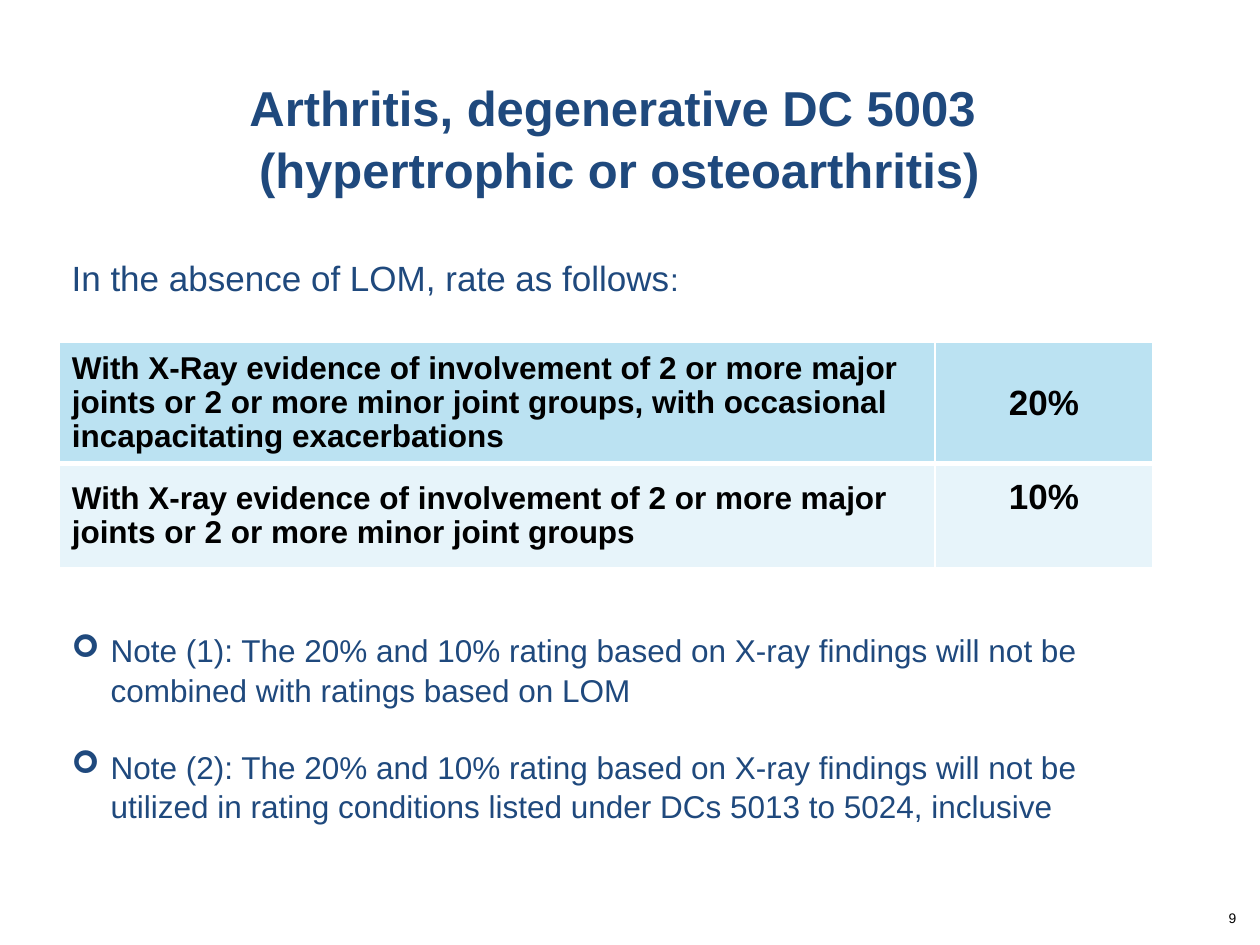
from lxml.etree import SubElement
from pptx import Presentation
from pptx.dml.color import RGBColor
from pptx.enum.text import MSO_ANCHOR, PP_ALIGN
from pptx.oxml.ns import qn
from pptx.util import Inches, Pt

NAVY = "1F497D"
BLACK = "000000"
WHITE = "FFFFFF"

RATINGS = [
    ("With X-Ray evidence of involvement of 2 or more major joints or 2 or more minor joint groups, "
     "with occasional incapacitating exacerbations", "20%", "BBE2F2", 0.96, 3),
    ("With X-ray evidence of involvement of 2 or more major joints or 2 or more minor joint groups",
     "10%", "E7F4FA", 0.83, 1),
]
NOTES = [
    "Note (1): The 20% and 10% rating based on X-ray findings will not be combined with ratings based on LOM",
    "Note (2): The 20% and 10% rating based on X-ray findings will not be utilized in rating conditions "
    "listed under DCs 5013 to 5024, inclusive",
]


def color(value):
    return RGBColor.from_string(value)


def add_text(para, text, size=18, ink=NAVY, bold=False, align=PP_ALIGN.LEFT, spacing=None):
    para.alignment = align
    if spacing:
        para.line_spacing = spacing
    for index, line in enumerate(text.split("\n")):
        if index:
            para.add_line_break()
        span = para.add_run()
        span.text = line
        span.font.name = "Arial"
        span.font.size = Pt(size)
        span.font.bold = bold
        span.font.color.rgb = color(ink)


def add_bullet(para, mark, indent):
    properties = para._p.get_or_add_pPr()
    properties.set("marL", str(indent))
    properties.set("indent", str(-indent))
    bullet_color = SubElement(properties, qn("a:buClr"))
    SubElement(bullet_color, qn("a:srgbClr"), val=NAVY)
    SubElement(properties, qn("a:buFont"), typeface="Wingdings")
    SubElement(properties, qn("a:buChar"), char=mark)


def add_borders(cell, bottom_width):
    properties = cell._tc.get_or_add_tcPr()
    widths = {"a:lnL": 1, "a:lnR": 1, "a:lnT": 1, "a:lnB": bottom_width}
    for position, (side, width) in enumerate(widths.items()):
        line = SubElement(properties, qn(side), w=str(Pt(width)))
        fill = SubElement(line, qn("a:solidFill"))
        SubElement(fill, qn("a:srgbClr"), val=WHITE)
        properties.insert(position, line)


class SlideBuilder:
    def __init__(self, deck):
        self.slide = deck.slides.add_slide(deck.slide_layouts[5])

    def title(self, text, left, top, width, height):
        box = self.slide.shapes.title
        box.left, box.top = Inches(left), Inches(top)
        box.width, box.height = Inches(width), Inches(height)
        box.text_frame.vertical_anchor = MSO_ANCHOR.MIDDLE
        add_text(box.text_frame.paragraphs[0], text, size=28, bold=True,
                 align=PP_ALIGN.CENTER, spacing=1.04)

    def text_box(self, left, top, width, height):
        box = self.slide.shapes.add_textbox(Inches(left), Inches(top), Inches(width), Inches(height))
        box.text_frame.word_wrap = True
        return box.text_frame

    def notes(self, notes, left, top, width, height):
        frame = self.text_box(left, top, width, height)
        for index, note in enumerate(notes):
            para = frame.add_paragraph() if index else frame.paragraphs[0]
            if index:
                para.space_before = Pt(21.5)
            add_bullet(para, "➢", Inches(0.31))
            add_text(para, note, spacing=1.04)

    def rating_table(self, ratings, left, top, widths):
        height = sum(rating[3] for rating in ratings)
        table = self.slide.shapes.add_table(
            len(ratings), len(widths), Inches(left), Inches(top),
            Inches(sum(widths)), Inches(height)).table
        for column, width in zip(table.columns, widths):
            column.width = Inches(width)
        for row, (evidence, percent, shade, height, border) in zip(table.rows, ratings):
            row.height = Inches(height)
            for cell in row.cells:
                cell.fill.solid()
                cell.fill.fore_color.rgb = color(shade)
                cell.vertical_anchor = MSO_ANCHOR.MIDDLE
                add_borders(cell, border)
            evidence_cell, percent_cell = row.cells
            add_text(evidence_cell.text_frame.paragraphs[0], evidence, ink=BLACK, bold=True, spacing=0.97)
            add_text(percent_cell.text_frame.paragraphs[0], percent, size=20, ink=BLACK,
                     bold=True, align=PP_ALIGN.CENTER)
        percent_cell.vertical_anchor = MSO_ANCHOR.TOP
        percent_cell.margin_top = Inches(0.11)


def main():
    deck = Presentation()
    deck.slide_width, deck.slide_height = Inches(10), Inches(7.5)
    page = SlideBuilder(deck)
    page.title("Arthritis, degenerative DC 5003 \n(hypertrophic or osteoarthritis)", 0, 0.5, 9.83, 1.17)
    page.rating_table(RATINGS, 0.47, 2.72, [6.95, 1.73])

    intro = page.text_box(0.47, 1.99, 8.68, 0.44).paragraphs[0]
    add_text(intro, "In the absence of LOM, rate as follows", size=20)
    add_text(intro, ":")
    page.notes(NOTES, 0.47, 4.95, 8.68, 1.62)

    number = page.text_box(7.58, 7.22, 2.33, 0.4)
    number.margin_top = 0
    add_text(number.paragraphs[0], "9", size=7.9, ink=BLACK, align=PP_ALIGN.RIGHT)
    deck.save("out.pptx")


if __name__ == "__main__":
    main()
